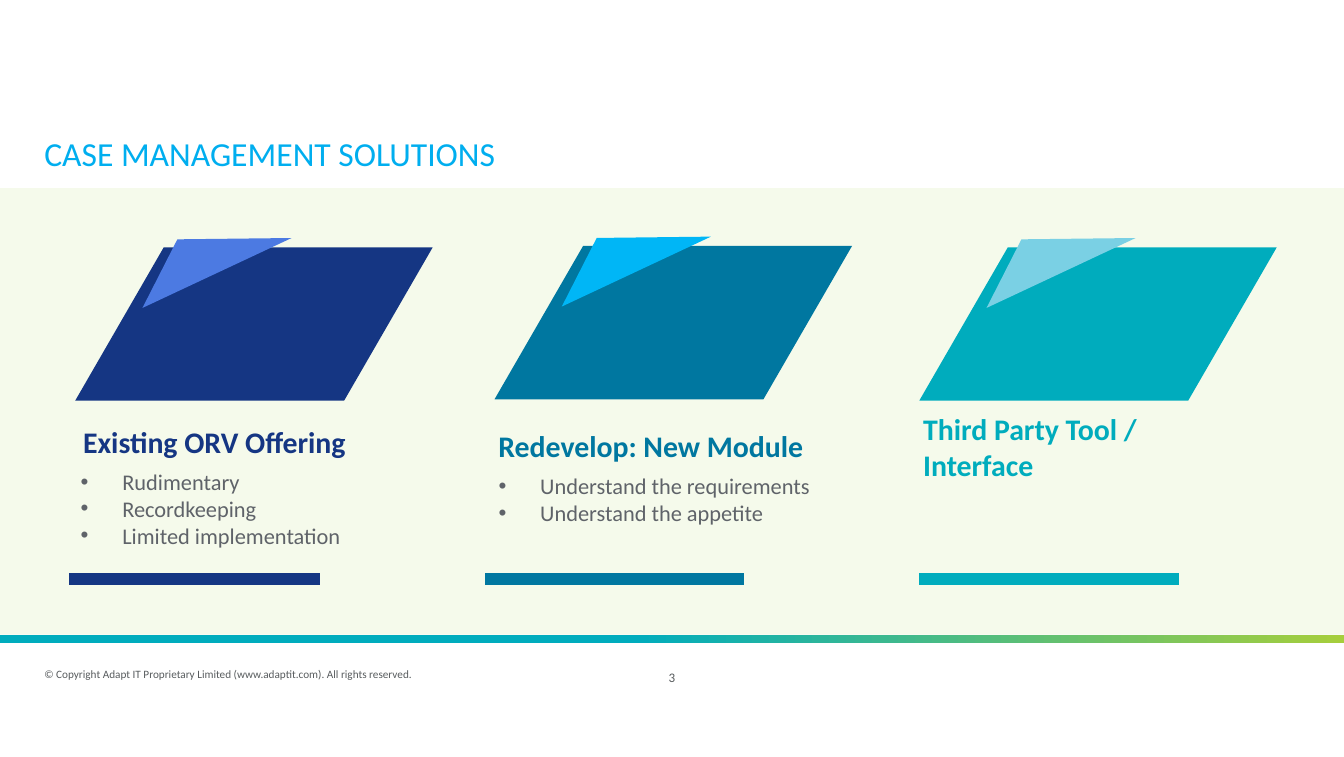
from lxml.etree import SubElement
from pptx import Presentation
from pptx.dml.color import RGBColor
from pptx.enum.shapes import MSO_SHAPE
from pptx.enum.text import MSO_ANCHOR, MSO_AUTO_SIZE, PP_ALIGN
from pptx.oxml.ns import qn
from pptx.util import Inches, Pt

COLORS = {
    "title": "00AEEF", "text": "5F6369", "footer": "585C5E",
    "lime": "A6CE3C", "navy": "153683", "navy_fold": "4C7AE2",
    "blue": "0077A0", "blue_fold": "00B6F6",
    "teal": "00ACBD", "teal_fold": "7AD0E4",
}


class SlideBuilder:
    """Style and current slide; lengths are cells of a 100-column grid."""
    font = "Calibri"
    columns = 100

    def __init__(self, deck, layout):
        self.slide = deck.slides.add_slide(deck.slide_layouts[layout])
        self.cell = deck.slide_width / self.columns

    def grid(self, *cells):
        return [round(value * self.cell) for value in cells]

    def color(self, name):
        return RGBColor.from_string(COLORS[name])

    def paint(self, shape, color):
        shape.shadow.inherit = False
        shape.fill.solid()
        shape.fill.fore_color.rgb = self.color(color)
        shape.line.fill.background()
        return shape

    def block(self, kind, area, color):
        shape = self.slide.shapes.add_shape(kind, *self.grid(*area))
        return self.paint(shape, color)

    def send_to_back(self, shape):
        shape.element.getparent().insert(2, shape.element)

    def band(self, area, color, opacity):
        shape = self.block(MSO_SHAPE.RECTANGLE, area, color)
        tint = shape.element.spPr.find(qn("a:solidFill"))[0]
        SubElement(tint, qn("a:alpha")).set("val", str(opacity * 1000))
        self.send_to_back(shape)

    def gradient_rule(self, area, start, end, begin):
        shape = self.block(MSO_SHAPE.RECTANGLE, area, start)
        shape.fill.gradient()
        shape.fill.gradient_angle = 0
        stops = shape.fill.gradient_stops
        for stop, color, position in zip(stops, (start, end), (begin, 1)):
            stop.color.rgb = self.color(color)
            stop.position = position
        self.send_to_back(shape)

    def polygon(self, points, color):
        first, *rest = [self.grid(*point) for point in points]
        outline = self.slide.shapes.build_freeform(*first)
        outline.add_line_segments(rest, close=True)
        self.paint(outline.convert_to_shape(), color)

    def text(self, lines, area, size, color, box=None, bold=False, inset=True,
             bullet=False, anchor=MSO_ANCHOR.MIDDLE, wrap=True, **paragraph):
        place = self.grid(*area)
        box = box or self.slide.shapes.add_textbox(*place)
        box.left, box.top, box.width, box.height = place
        frame = box.text_frame
        settings = {"auto_size": MSO_AUTO_SIZE.NONE, "word_wrap": wrap,
                    "vertical_anchor": anchor}
        if not inset:
            settings |= {f"margin_{side}": 0
                         for side in ("left", "top", "right", "bottom")}
        for name, value in settings.items():
            setattr(frame, name, value)
        frame.text = "\n".join(lines)
        layout = {"alignment": PP_ALIGN.LEFT, "space_before": Pt(0)} | paragraph
        style = {"name": self.font, "size": Pt(size), "bold": bold}
        for para in frame.paragraphs:
            for name, value in layout.items():
                setattr(para, name, value)
            if bullet:
                self.bullet(para)
            for span in para.runs:
                for name, value in style.items():
                    setattr(span.font, name, value)
                span.font.color.rgb = self.color(color)

    def bullet(self, para):
        properties = para._p.get_or_add_pPr()
        indent = Inches(0.31)
        properties.set("marL", str(indent))
        properties.set("indent", str(-indent))
        SubElement(properties, qn("a:buChar")).set("char", "•")

    def folded_card(self, left, top, color):
        card = self.block(MSO_SHAPE.PARALLELOGRAM, (left, top, 26.6, 11.4), color)
        card.adjustments[0] = 0.578
        x, y = left + 5, top - 0.7
        self.polygon([(x + 2.6, y + 0.1), (x, y + 5.2), (x + 11.1, y)],
                     f"{color}_fold")


def main():
    deck = Presentation()
    deck.slide_width, deck.slide_height = Inches(10), Inches(5.63)
    page = SlideBuilder(deck, layout=3)
    title, *bodies = page.slide.placeholders

    # Background band and rule
    page.gradient_rule((0, 47.2, 100, 0.6), "teal", "lime", 0.47)
    page.band((0, 14, 100, 33.2), "lime", 10)

    # Title
    page.text(["CASE MANAGEMENT SOLUTIONS"], (3.3, 8.7, 93.3, 5.3), 18, "title",
              box=title, inset=False, line_spacing=Pt(22.6))

    # Solutions: color, card place, heading, its area, bar left and width
    solutions = [
        ("navy", (5.6, 18.4), "Existing ORV Offering", (5.2, 31, 25, 3.7), 5.15, 18.7),
        ("blue", (36.8, 18.3), "Redevelop: New Module", (36.1, 31.3, 25.8, 3.7), 36.1, 19.3),
        ("teal", (68.4, 18.4), "Third Party Tool / Interface", (67.7, 30, 23.9, 6.4), 68.4, 19.3),
    ]
    for color, place, heading, area, bar_left, bar_width in solutions:
        page.folded_card(*place, color)
        page.text([heading], area, 16, color, bold=True)
        page.block(MSO_SHAPE.FLOWCHART_PROCESS, (bar_left, 42.6, bar_width, 0.9), color)

    # Bullet lists
    lists = [
        (["Rudimentary", "Recordkeeping", "Limited implementation"],
         (5, 34.3, 25.1, 7.1)),
        (["Understand the requirements", "Understand the appetite"],
         (36.1, 34.6, 25.9, 5)),
    ]
    for body, (lines, area) in zip(bodies, lists):
        page.text(lines, area, 12, "text", box=body, bullet=True,
                  anchor=MSO_ANCHOR.TOP)

    # Footer
    page.text(["© Copyright Adapt IT Proprietary Limited (www.adaptit.com). "
               "All rights reserved."],
              (3.3, 47.8, 34.5, 4.6), 6, "footer", inset=False, wrap=False)
    page.text(["3"], (43.1, 47.8, 13.8, 5.2), 7, "footer", inset=False,
              wrap=False, alignment=PP_ALIGN.CENTER)

    deck.save("out.pptx")


if __name__ == "__main__":
    main()
